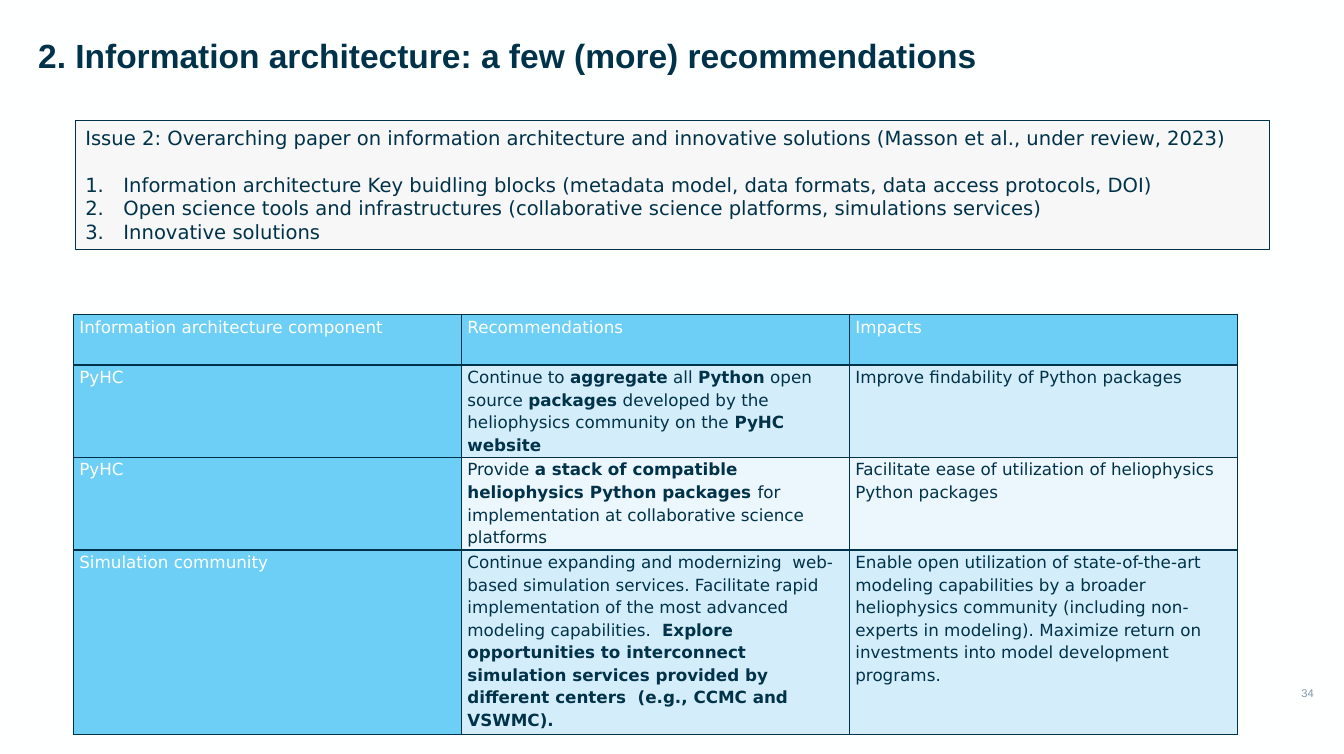
"""Build the slide on information architecture recommendations."""
import pptx
import pptx.util
import pptx.dml.color
import pptx.enum.shapes
import pptx.enum.text
import pptx.oxml
import pptx.oxml.ns

SCALE = 9144
HUES = {"navy": "003249", "white": "FEFFFF", "pale": "F7F7F7", "grey": "8197A6",
        "sky": "6DCFF6", "light": "D4EDFB", "faint": "EBF6FD"}
SANS = "DejaVu Sans"
ALIGN = pptx.enum.text.PP_ALIGN
ANCHOR = pptx.enum.text.MSO_ANCHOR

ISSUE = ("Issue 2: Overarching paper on information architecture and innovative "
         "solutions (Masson et al., under review, 2023)")
TOPICS = [
    "Information architecture Key buidling blocks (metadata model, data formats, "
    "data access protocols, DOI)",
    "Open science tools and infrastructures (collaborative science platforms, "
    "simulations services)",
    "Innovative solutions",
]
HEADS = [["Information architecture component"], ["Recommendations"], ["Impacts"]]
ADVICE = [
    [["PyHC"],
     ["Continue to ", "aggregate", " all ", "Python", " open source ", "packages",
      " developed by the heliophysics community on the ", "PyHC website"],
     ["Improve findability of Python packages"]],
    [["PyHC"],
     ["Provide ", "a stack of compatible heliophysics Python packages ",
      "for implementation at collaborative science platforms"],
     ["Facilitate ease of utilization of heliophysics Python packages"]],
    [["Simulation community"],
     ["Continue expanding and modernizing  web-based simulation services. Facilitate "
      "rapid implementation of the most advanced modeling capabilities.  ",
      "Explore opportunities to interconnect simulation services provided by "
      "different centers  (e.g., CCMC and VSWMC)."],
     ["Enable open utilization of state-of-the-art modeling capabilities by a broader "
      "heliophysics community (including non-experts in modeling). Maximize return on "
      "investments into model development programs."]],
]


def px(count):
    return pptx.util.Emu(count * SCALE)


def hue(name):
    return pptx.dml.color.RGBColor.from_string(HUES[name])


def paint(fill, name):
    fill.solid()
    fill.fore_color.rgb = hue(name)


def add_run(para, text, size, color, face=SANS, bold=False):
    run = para.add_run()
    run.text = text
    run.font.size = pptx.util.Pt(size)
    run.font.name = face
    run.font.bold = bold
    run.font.color.rgb = hue(color)


def number(para):
    props = para._p.get_or_add_pPr()
    props.set("marL", str(px(38)))
    props.set("indent", str(px(-38)))
    mark = pptx.oxml.ns.qn("a:buAutoNum")
    props.append(props.makeelement(mark, {"type": "arabicPeriod"}))


def add_title(slide, text):
    title = slide.shapes.title
    title.left, title.top, title.width, title.height = map(px, (28, 30, 1134, 50))
    frame = title.text_frame
    frame.auto_size = pptx.enum.text.MSO_AUTO_SIZE.NONE
    frame.vertical_anchor = ANCHOR.MIDDLE
    para = frame.paragraphs[0]
    para.alignment = ALIGN.LEFT
    add_run(para, text, 24, "navy", "Arial", True)


def add_panel(slide):
    kind = pptx.enum.shapes.MSO_SHAPE.RECTANGLE
    panel = slide.shapes.add_shape(kind, *map(px, (75, 120, 1188, 128)))
    panel.shadow.inherit = False
    paint(panel.fill, "pale")
    panel.line.color.rgb = hue("navy")
    panel.line.width = pptx.util.Pt(0.75)
    frame = panel.text_frame
    frame.word_wrap = True
    frame.vertical_anchor = ANCHOR.TOP
    para = frame.paragraphs[0]
    para.alignment = ALIGN.LEFT
    para.space_after = pptx.util.Pt(17)
    add_run(para, ISSUE, 14, "navy")
    for topic in TOPICS:
        para = frame.add_paragraph()
        para.alignment = ALIGN.LEFT
        number(para)
        add_run(para, topic, 14, "navy")


def add_edges(cell):
    props = cell._tc.get_or_add_tcPr()
    for side in "LRTB":
        props.append(pptx.oxml.parse_xml(
            f'<a:ln{side} {pptx.oxml.ns.nsdecls("a")} w="12700"><a:solidFill>'
            f'<a:srgbClr val="{HUES["navy"]}"/></a:solidFill></a:ln{side}>'))


def fill_cell(cell, parts, back, color):
    add_edges(cell)
    paint(cell.fill, back)
    cell.margin_left = cell.margin_right = px(6)
    cell.margin_top = cell.margin_bottom = 0
    para = cell.text_frame.paragraphs[0]
    para.line_spacing = 1.15
    for place, text in enumerate(parts):
        add_run(para, text, 12, color, bold=place % 2 == 1)


def add_grid(slide):
    rows = [HEADS] + ADVICE
    spot = map(px, (73, 313, 1158, 418))
    table = slide.shapes.add_table(len(rows), len(HEADS), *spot).table
    table.first_row = table.horz_banding = False
    for col in table.columns:
        col.width = px(386)
    for row, high in zip(table.rows, (50, 92, 92, 184)):
        row.height = px(high)
    for r, row in enumerate(rows):
        for c, parts in enumerate(row):
            if r == 0 or c == 0:
                back, color = "sky", "white"
            else:
                back, color = ("light" if r % 2 else "faint"), "navy"
            fill_cell(table.cell(r, c), parts, back, color)


def add_page(slide, text):
    box = slide.shapes.add_textbox(*map(px, (897, 678, 410, 24)))
    frame = box.text_frame
    frame.word_wrap = True
    frame.margin_right = 0
    para = frame.paragraphs[0]
    para.alignment = ALIGN.RIGHT
    add_run(para, text, 8, "grey", "Arial")


def main():
    deck = pptx.Presentation()
    deck.slide_width, deck.slide_height = px(1337), px(750)
    slide = deck.slides.add_slide(deck.slide_layouts[5])
    paint(slide.background.fill, "white")
    add_page(slide, "34")
    add_title(slide, "2. Information architecture: a few (more) recommendations")
    add_panel(slide)
    add_grid(slide)
    deck.save("out.pptx")


if __name__ == "__main__":
    main()
